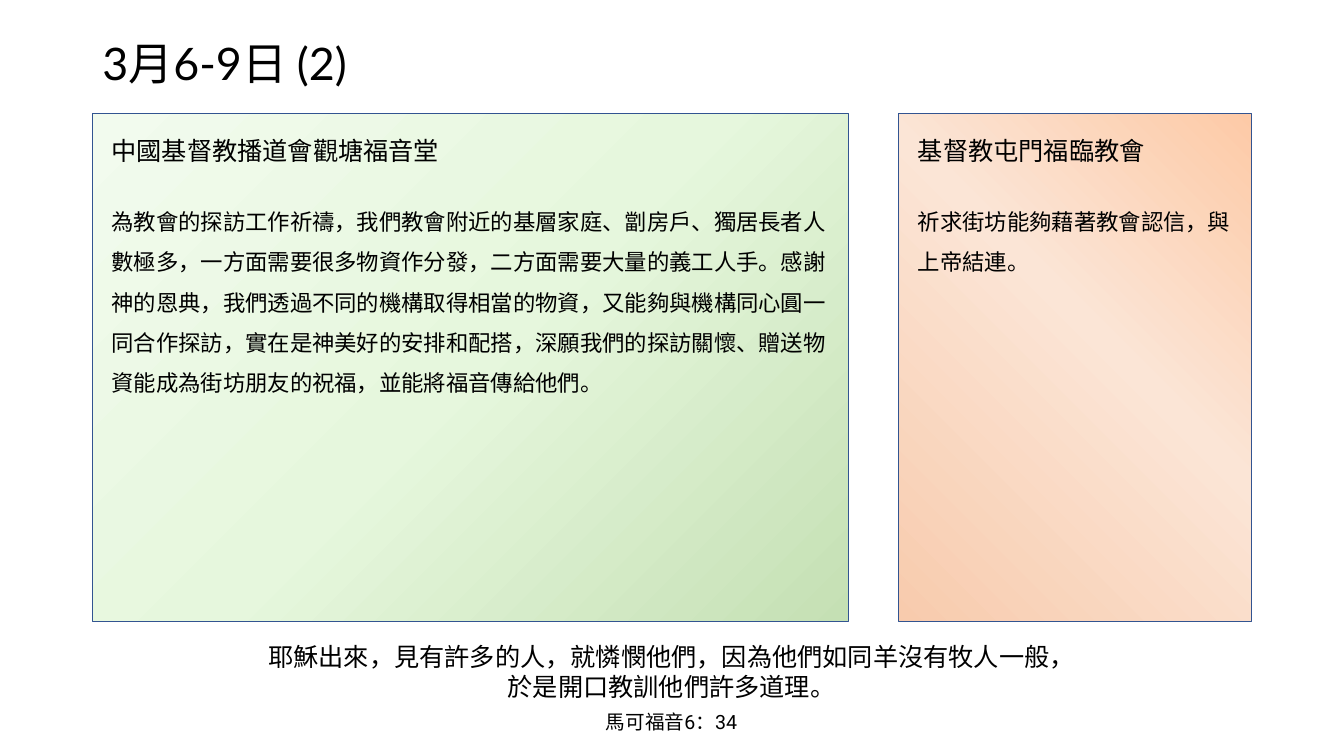
from copy import deepcopy
from dataclasses import dataclass

from pptx import Presentation
from pptx.dml.color import RGBColor
from pptx.enum.shapes import MSO_SHAPE
from pptx.enum.text import MSO_ANCHOR, MSO_AUTO_SIZE, PP_ALIGN
from pptx.oxml.ns import qn
from pptx.slide import Slide
from pptx.text.text import TextFrame, _Paragraph as Paragraph
from pptx.util import Inches, Length, Pt

GRID = Inches(1 / 12)  # 160 columns by 90 rows


@dataclass(frozen=True)
class Theme:
    text: str = "000000"
    outline: str = "325491"
    title_font: str = "Lato"
    body_font: str = "Arial"
    verse_font: str = "Roboto"
    title_size: int = 32
    heading_size: int = 18
    body_size: int = 16
    source_size: int = 14


@dataclass(frozen=True)
class Area:
    """A rectangle in grid columns and rows."""
    column: float
    row: float
    columns: float
    rows: float

    def lengths(self) -> tuple[Length, ...]:
        return tuple(Length(round(value * GRID))
                     for value in (self.column, self.row, self.columns, self.rows))


@dataclass(frozen=True)
class Panel:
    church: str
    prayer: str
    column: float
    columns: float
    text_rows: float
    stops: tuple[tuple[float, str], ...]
    angle: int  # counter-clockwise


THEME = Theme()
PANEL_ROW, PANEL_ROWS = 13.5, 60.5
TEXT_INSET, TEXT_DROP = 1.1, 2
PANELS = (
    Panel(
        "中國基督教播道會觀塘福音堂",
        "為教會的探訪工作祈禱，我們教會附近的基層家庭、劏房戶、獨居長者人數極多，"
        "一方面需要很多物資作分發，二方面需要大量的義工人手。感謝神的恩典，"
        "我們透過不同的機構取得相當的物資，又能夠與機構同心圓一同合作探訪，"
        "實在是神美好的安排和配搭，深願我們的探訪關懷、贈送物資能成為街坊朋友的祝福，"
        "並能將福音傳給他們。",
        11, 90, 32.2, ((0, "C5E0B4"), (0.5, "E6F7DD"), (1, "F2FBEE")), 135),
    Panel(
        "基督教屯門福臨教會",
        "祈求街坊能夠藉著教會認信，與上帝結連。",
        107, 42, 17.6, ((0, "F8CBAD"), (0.57, "FBE5D6"), (1, "FDCAA7")), 45),
)


def write(paragraph: Paragraph, text: str, font_name: str, size: int) -> None:
    paragraph.text = text
    paragraph.font.name = font_name
    paragraph.font.size = Pt(size)
    paragraph.font.color.rgb = RGBColor.from_string(THEME.text)


def add_text_frame(slide: Slide, area: Area) -> TextFrame:
    frame = slide.shapes.add_textbox(*area.lengths()).text_frame
    frame.word_wrap = True
    frame.auto_size = MSO_AUTO_SIZE.SHAPE_TO_FIT_TEXT
    return frame


def add_title(slide: Slide) -> None:
    title = slide.shapes.title
    title.left, title.top, title.width, title.height = Area(11, 3.6, 78.7, 8.6).lengths()
    title.text_frame.vertical_anchor = MSO_ANCHOR.MIDDLE
    paragraph = title.text_frame.paragraphs[0]
    paragraph.alignment = PP_ALIGN.LEFT
    paragraph.line_spacing = 0.9
    write(paragraph, "3月6-9日 (2)", THEME.title_font, THEME.title_size)


def add_background(slide: Slide, panel: Panel) -> None:
    area = Area(panel.column, PANEL_ROW, panel.columns, PANEL_ROWS)
    shape = slide.shapes.add_shape(MSO_SHAPE.RECTANGLE, *area.lengths())
    shape.shadow.inherit = False
    shape.line.color.rgb = RGBColor.from_string(THEME.outline)
    shape.line.width = Pt(1)
    shape.fill.gradient()
    shape.fill.gradient_angle = panel.angle
    stop_list = shape._element.spPr.find(".//" + qn("a:gsLst"))
    stop_list.append(deepcopy(stop_list[0]))
    for stop, (position, color) in zip(shape.fill.gradient_stops, panel.stops):
        stop.position = position
        stop.color.rgb = RGBColor.from_string(color)


def add_prayer(slide: Slide, panel: Panel) -> None:
    frame = add_text_frame(slide, Area(
        panel.column + TEXT_INSET, PANEL_ROW + TEXT_DROP,
        panel.columns - 2 * TEXT_INSET, panel.text_rows))
    write(frame.paragraphs[0], panel.church, THEME.body_font, THEME.heading_size)
    prayer = frame.add_paragraph()
    prayer.line_spacing = 1.5
    prayer.space_before = Pt(21)
    write(prayer, panel.prayer, THEME.body_font, THEME.body_size)


def add_verse(slide: Slide) -> None:
    frame = add_text_frame(slide, Area(25.3, 75.5, 109.3, 12.4))
    frame.vertical_anchor = MSO_ANCHOR.BOTTOM
    verse, source = frame.paragraphs[0], frame.add_paragraph()
    verse.alignment = source.alignment = PP_ALIGN.CENTER
    verse.space_after = Pt(6)
    write(verse, "耶穌出來，見有許多的人，就憐憫他們，因為他們如同羊沒有牧人一般，\v"
          "於是開口教訓他們許多道理。", THEME.verse_font, THEME.heading_size)
    write(source, "馬可福音6：34", THEME.verse_font, THEME.source_size)


def main() -> None:
    presentation = Presentation()
    presentation.slide_width, presentation.slide_height = 160 * GRID, 90 * GRID
    slide = presentation.slides.add_slide(presentation.slide_layouts[5])
    for panel in PANELS:
        add_background(slide, panel)
    add_title(slide)
    for panel in PANELS:
        add_prayer(slide, panel)
    add_verse(slide)
    presentation.save("out.pptx")


if __name__ == "__main__":
    main()
